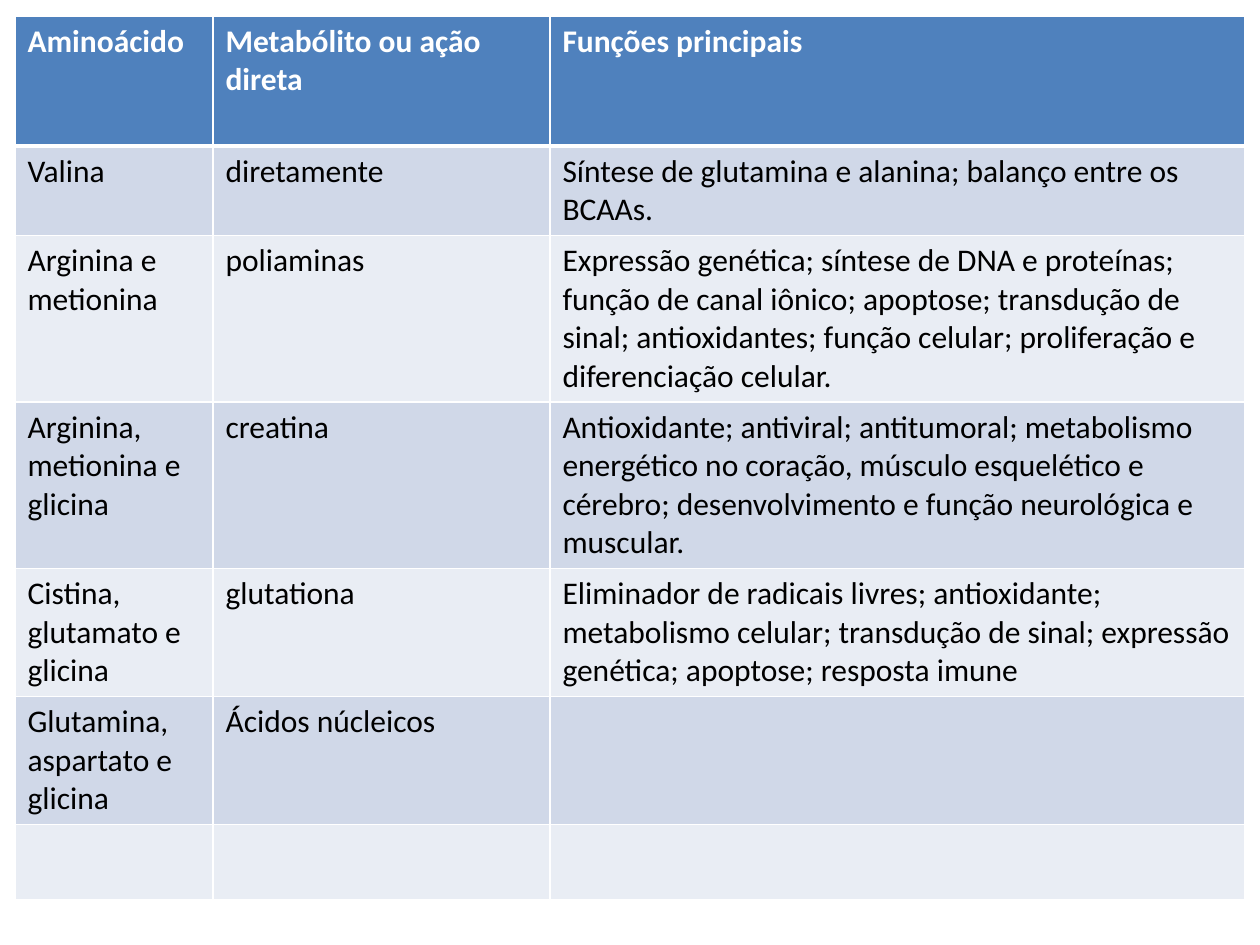
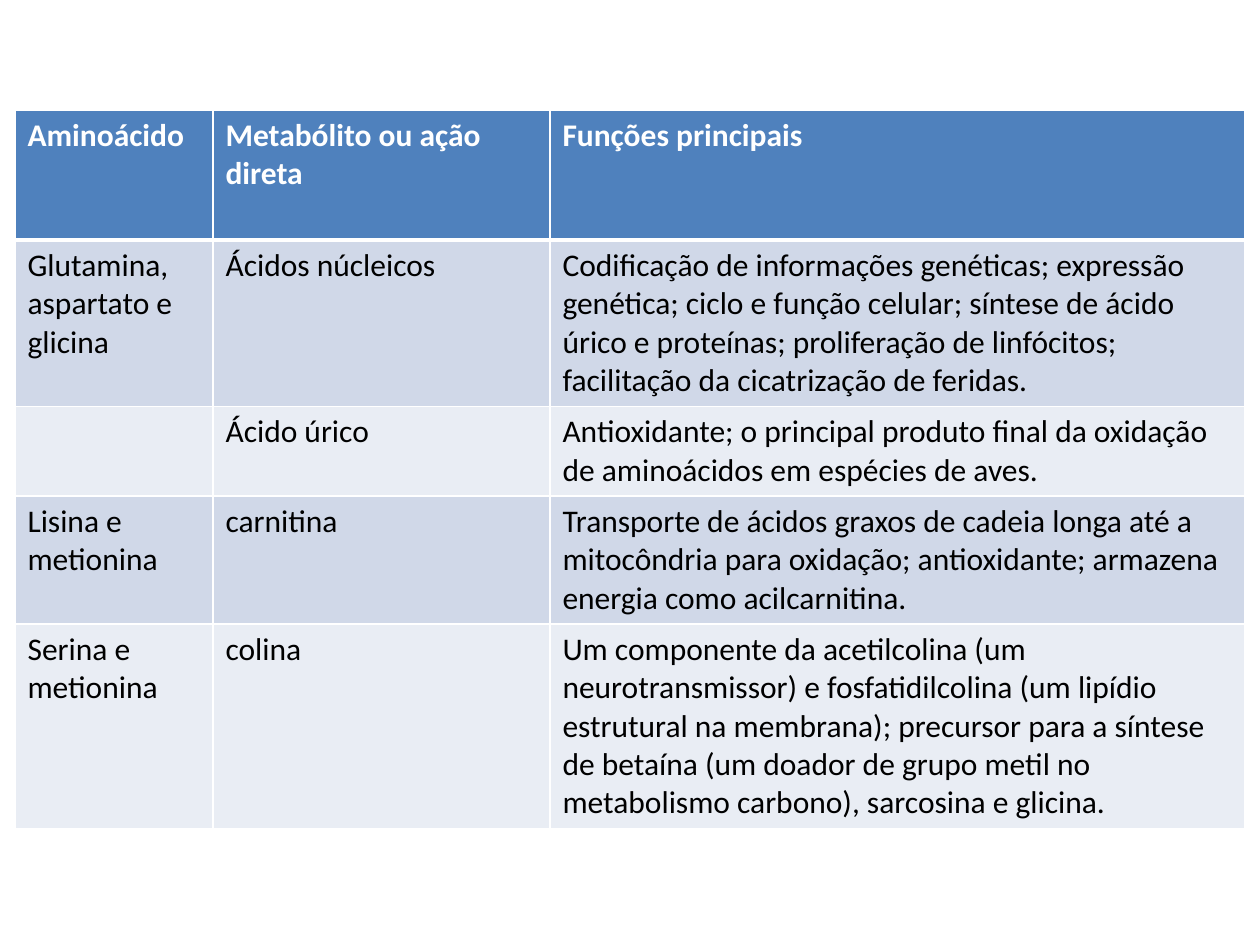
from lxml import etree
from pptx import Presentation
from pptx.dml.color import RGBColor
from pptx.oxml.ns import qn
from pptx.util import Pt

# Shared look
PX = 914400 / 126
WHITE = RGBColor(0xFF, 0xFF, 0xFF)
BLACK = RGBColor(0, 0, 0)
BLUE = RGBColor(0x4F, 0x81, 0xBD)
BANDS = [RGBColor(0xD0, 0xD8, 0xE8), RGBColor(0xE9, 0xED, 0xF4)]
FONT = "Calibri"
LEFT = 15
COLS = [198, 337, 695]
HEAD_H, ROW_H = 130, 75
THIN, THICK = 1, 3

# Table content
HEAD = ("Aminoácido", "Metabólito ou ação direta", "Funções principais")
NUCLEIC = ("Glutamina, aspartato e glicina", "Ácidos núcleicos")
FIRST = [
    ("Valina", "diretamente",
     "Síntese de glutamina e alanina; balanço entre os BCAAs."),
    ("Arginina e metionina", "poliaminas",
     "Expressão genética; síntese de DNA e proteínas; função de canal iônico; "
     "apoptose; transdução de sinal; antioxidantes; função celular; "
     "proliferação e diferenciação celular."),
    ("Arginina, metionina e glicina", "creatina",
     "Antioxidante; antiviral; antitumoral; metabolismo energético no coração, "
     "músculo esquelético e cérebro; desenvolvimento e função neurológica e "
     "muscular."),
    ("Cistina, glutamato e glicina", "glutationa",
     "Eliminador de radicais livres; antioxidante; metabolismo celular; "
     "transdução de sinal; expressão genética; apoptose; resposta imune"),
    (*NUCLEIC, ""),
    ("", "", ""),
]
SECOND = [
    (*NUCLEIC,
     "Codificação de informações genéticas; expressão genética; ciclo e função "
     "celular; síntese de ácido úrico e proteínas; proliferação de linfócitos; "
     "facilitação da cicatrização de feridas."),
    ("", "Ácido úrico",
     "Antioxidante; o principal produto final da oxidação de aminoácidos em "
     "espécies de aves."),
    ("Lisina e metionina", "carnitina",
     "Transporte de ácidos graxos de cadeia longa até a mitocôndria para "
     "oxidação; antioxidante; armazena energia como acilcarnitina."),
    ("Serina e metionina", "colina",
     "Um componente da acetilcolina (um neurotransmissor) e fosfatidilcolina "
     "(um lipídio estrutural na membrana); precursor para a síntese de betaína "
     "(um doador de grupo metil no metabolismo carbono), sarcosina e glicina."),
]


def px(num):
    return round(num * PX)


def put_text(cell, text, size=18, color=BLACK, bold=False):
    para = cell.text_frame.paragraphs[0]
    font = para.font
    if text:
        run = para.add_run()
        run.text = text
        font = run.font
    font.name, font.size, font.bold = FONT, Pt(size), bold
    font.color.rgb = color


def add_edges(cell, top=THIN, bottom=THIN):
    props = cell._tc.get_or_add_tcPr()
    widths = {"lnL": THIN, "lnR": THIN, "lnT": top, "lnB": bottom}
    for tag, width in widths.items():
        line = etree.SubElement(props, qn("a:" + tag), w=str(Pt(width)))
        fill = etree.SubElement(line, qn("a:solidFill"))
        etree.SubElement(fill, qn("a:srgbClr"), val=str(WHITE))


def fill_cell(cell, color):
    cell.fill.solid()
    cell.fill.fore_color.rgb = color


def add_grid(slide, top, height, body):
    frame = slide.shapes.add_table(len(body) + 1, len(COLS), px(LEFT), px(top),
                                   px(sum(COLS)), px(height))
    table = frame.table
    for col, width in zip(table.columns, COLS):
        col.width = px(width)

    # Header row, then banded body rows
    for r, words in enumerate([HEAD, *body]):
        head = r == 0
        table.rows[r].height = px(HEAD_H if head else ROW_H)
        for c, text in enumerate(words):
            cell = table.cell(r, c)
            add_edges(cell, top=THICK if r == 1 else THIN,
                      bottom=THICK if head else THIN)
            fill_cell(cell, BLUE if head else BANDS[(r - 1) % 2])
            put_text(cell, text, color=WHITE if head else BLACK, bold=head)
    frame.height = px(height)


def main():
    deck = Presentation()
    deck.slide_width, deck.slide_height = px(1260), px(945)
    blank = deck.slide_layouts[6]
    for top, height, body in [(16, 873, FIRST), (110, 709, SECOND)]:
        add_grid(deck.slides.add_slide(blank), top, height, body)
    deck.save("out.pptx")


if __name__ == "__main__":
    main()
